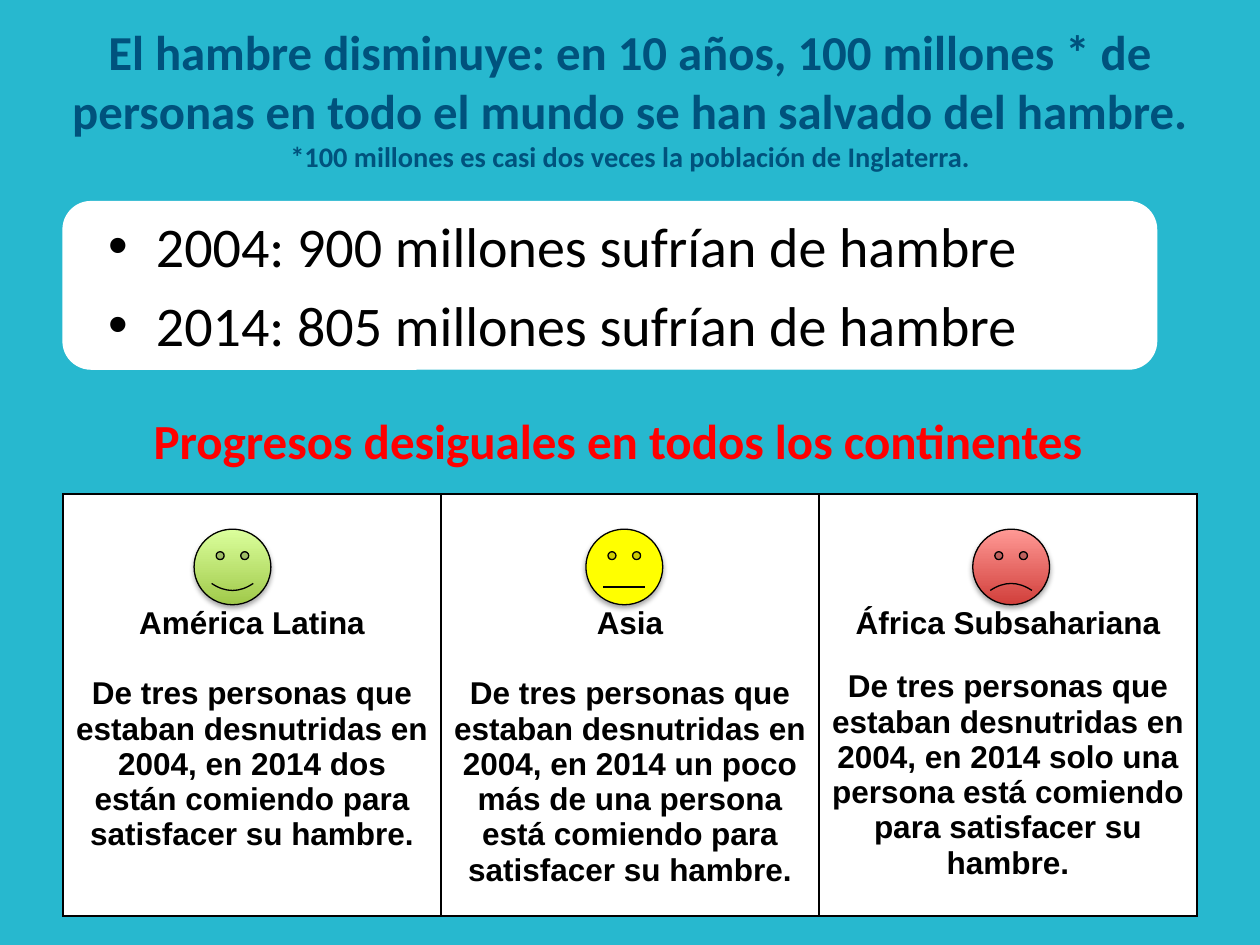
"""Build the slide on falling hunger and uneven progress by continent."""
from dataclasses import dataclass

from lxml.etree import SubElement as Sub
from pptx import Presentation as Deck
from pptx.dml.color import RGBColor as Rgb
from pptx.enum.shapes import MSO_SHAPE as Kind
from pptx.enum.text import MSO_ANCHOR as Anchor, PP_ALIGN as Align
from pptx.oxml.ns import qn
from pptx.util import Inches, Pt


@dataclass(frozen=True)
class Theme:
    back: str = "27B8CF"
    card: str = "FFFFFF"
    ink: str = "000000"
    head: str = "00527D"
    alert: str = "FF0000"
    sans: str = "Calibri"
    grid: str = "Arial"
    title: float = 27.9
    note: float = 16.2
    list: float = 32
    sub: float = 28
    cell: float = 18


@dataclass(frozen=True)
class Area:
    name: str
    story: str
    gap: float
    left: float
    smile: float
    low: str
    high: str


THEME = Theme()
AREAS = [
    Area("América Latina",
         "De tres personas que estaban desnutridas en 2004, en 2014 dos "
         "están comiendo para satisfacer su hambre.",
         20, 1.54, 0.047, "A0C94A", "DBFF9C"),
    Area("Asia",
         "De tres personas que estaban desnutridas en 2004, en 2014 un poco "
         "más de una persona está comiendo para satisfacer su hambre.",
         20, 4.65, 0, "FFFF00", "FFFF00"),
    Area("África Subsahariana",
         "De tres personas que estaban desnutridas en 2004, en 2014 solo una "
         "persona está comiendo para satisfacer su hambre.",
         16, 7.72, -0.046, "D13F3B", "FF9995"),
]


def paint(fill, tint: str) -> None:
    """Give a fill one solid colour."""
    fill.solid()
    fill.fore_color.rgb = Rgb.from_string(tint)


def style(run, size: float, tint: str, face: str, bold: bool = False) -> None:
    """Set the font of a run."""
    font = run.font
    font.size, font.name, font.bold = Pt(size), face, bold
    font.color.rgb = Rgb.from_string(tint)


def add_text(slide, box: tuple, text: str):
    """Add a wrapping text box and return its frame."""
    frame = slide.shapes.add_textbox(*map(Inches, box)).text_frame
    frame.word_wrap = True
    frame.text = text
    return frame


def add_shape(slide, kind, box: tuple, bend: float, edge: str):
    """Add a preset shape with a thin outline and no shadow."""
    shape = slide.shapes.add_shape(kind, *map(Inches, box))
    shape.adjustments[0] = bend
    shape.shadow.inherit = False
    shape.line.color.rgb = Rgb.from_string(edge)
    shape.line.width = Pt(0.75)
    return shape


def add_title(slide) -> None:
    """Add the headline and its footnote."""
    frame = add_text(
        slide, (0, 0.09, 10, 1.37),
        "El hambre disminuye: en 10 años, 100 millones * de personas en todo "
        "el mundo se han salvado del hambre.\v"
        "*100 millones es casi dos veces la población de Inglaterra.")
    frame.vertical_anchor = Anchor.MIDDLE
    para = frame.paragraphs[0]
    para.alignment = Align.CENTER
    for run, size in zip(para.runs, (THEME.title, THEME.note)):
        style(run, size, THEME.head, THEME.sans, True)


def add_list(slide) -> None:
    """Add the white card with its two bullets."""
    card = add_shape(slide, Kind.ROUNDED_RECTANGLE, (0.5, 1.6, 8.68, 1.33),
                     0.167, THEME.card)
    paint(card.fill, THEME.card)
    frame = add_text(slide, (0.76, 1.63, 9, 1.32),
                     "2004: 900 millones sufrían de hambre\n"
                     "2014: 805 millones sufrían de hambre")
    for row, para in enumerate(frame.paragraphs):
        para.space_before = Pt(6.4 * row)
        props = para._p.get_or_add_pPr()
        props.set("marL", str(Inches(0.38)))
        props.set("indent", str(Inches(-0.38)))
        Sub(props, qn("a:buFont"), typeface=THEME.grid)
        Sub(props, qn("a:buChar"), char="•")
        style(para.runs[0], THEME.list, THEME.ink, THEME.sans)


def add_sub(slide) -> None:
    """Add the heading of the table."""
    frame = add_text(slide, (1.12, 3.21, 7.68, 0.57),
                     "Progresos desiguales en todos los continentes")
    style(frame.paragraphs[0].runs[0], THEME.sub, THEME.alert, THEME.sans, True)


def fill_cell(cell, area: Area) -> None:
    """Write one area into its cell, below the room for the face."""
    props = cell._tc.get_or_add_tcPr()
    for side in "LRTB":
        line = Sub(props, qn(f"a:ln{side}"), w=str(Pt(1)))
        Sub(Sub(line, qn("a:solidFill")), qn("a:srgbClr"), val=THEME.ink)
    paint(cell.fill, THEME.card)
    cell.margin_top = Inches(0.89)
    frame = cell.text_frame
    frame.text = f"{area.name}\n{area.story}"
    for para in frame.paragraphs:
        para.alignment = Align.CENTER
        style(para.runs[0], THEME.cell, THEME.ink, THEME.grid, True)
    frame.paragraphs[1].space_before = Pt(area.gap)


def add_grid(slide) -> None:
    """Add the table with a column for each area."""
    box = map(Inches, (0.5, 3.92, 9, 3.35))
    table = slide.shapes.add_table(1, len(AREAS), *box).table
    table.first_row = table.horz_banding = False
    for col, area in enumerate(AREAS):
        fill_cell(table.cell(0, col), area)


def add_face(slide, area: Area) -> None:
    """Add the face that rates an area, with a soft shadow."""
    face = add_shape(slide, Kind.SMILEY_FACE, (area.left, 4.2, 0.61, 0.6),
                     area.smile, THEME.ink)
    if area.low == area.high:
        paint(face.fill, area.low)
    else:
        face.fill.gradient()
        face.fill.gradient_angle = 90
        for stop, tint in zip(face.fill.gradient_stops, (area.low, area.high)):
            stop.color.rgb = Rgb.from_string(tint)
    glow = Sub(face._element.spPr.find(qn("a:effectLst")), qn("a:outerShdw"),
               blurRad=str(Pt(3.1)), dist=str(Pt(1.8)), dir="5400000",
               rotWithShape="0")
    Sub(Sub(glow, qn("a:srgbClr"), val=THEME.ink), qn("a:alpha"), val="35000")


def main() -> None:
    """Build and save the deck."""
    deck = Deck()
    deck.slide_width, deck.slide_height = Inches(10), Inches(7.5)
    slide = deck.slides.add_slide(deck.slide_layouts[6])
    paint(slide.background.fill, THEME.back)
    add_title(slide)
    add_list(slide)
    add_grid(slide)
    for area in AREAS:
        add_face(slide, area)
    add_sub(slide)
    deck.save("out.pptx")


if __name__ == "__main__":
    main()
